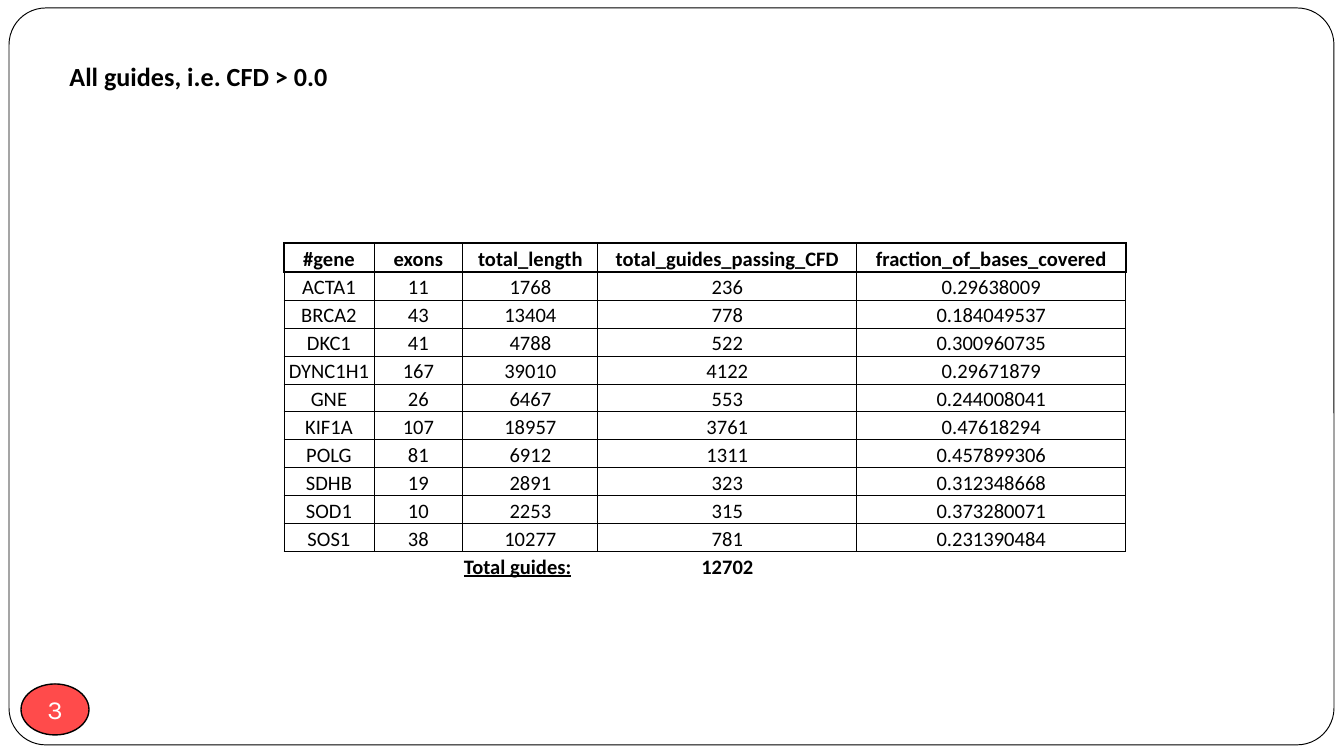
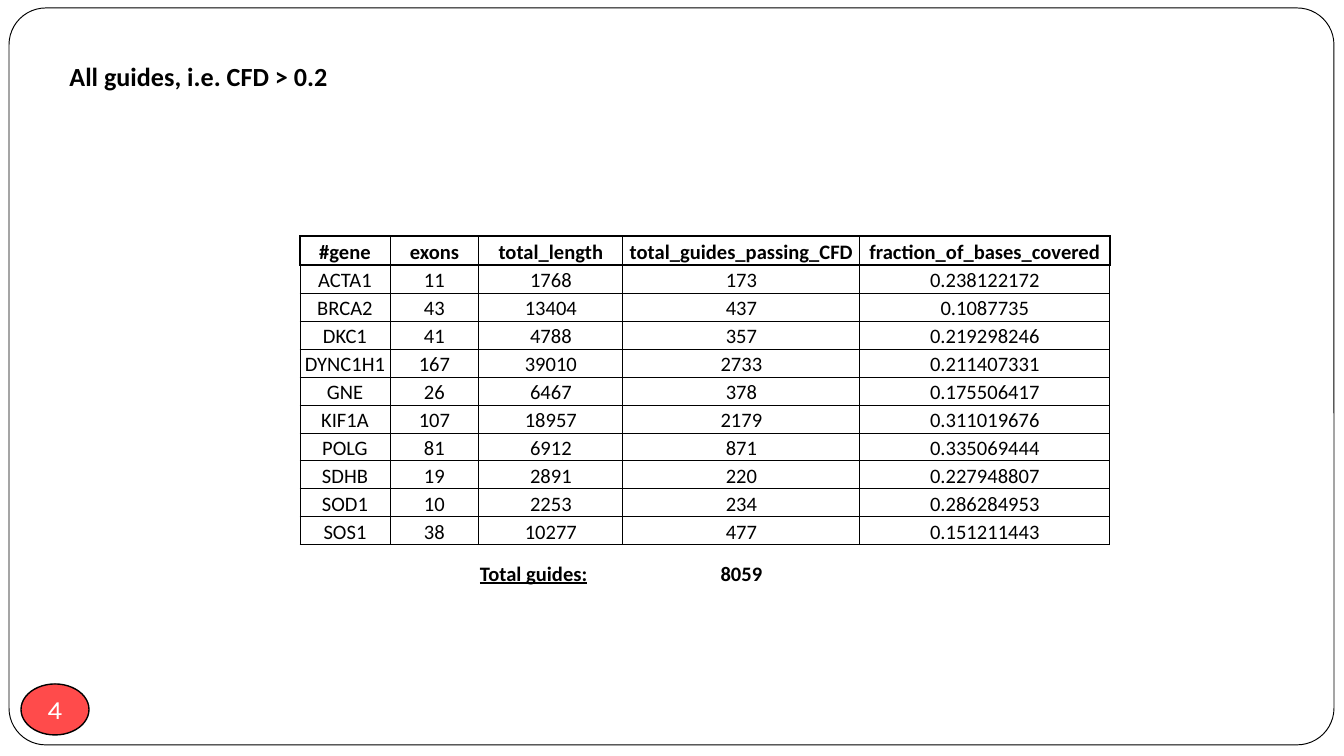
from dataclasses import dataclass
from lxml.etree import SubElement
from pptx import Presentation
from pptx.dml.color import RGBColor
from pptx.enum.shapes import MSO_SHAPE
from pptx.enum.text import MSO_ANCHOR, MSO_AUTO_SIZE, PP_ALIGN
from pptx.oxml.ns import qn
from pptx.util import Emu, Pt


@dataclass(frozen=True)
class Theme:
    black: str = "000000"
    white: str = "FFFFFF"
    red: str = "FF4B4B"
    font: str = "Calibri"
    badge_font: str = "Karla"
    title_size: int = 14
    table_size: int = 11
    thin: float = 0.5
    badge_line: float = 0.75
    thick: float = 1


THEME = Theme()
WIDTH, HEIGHT = 1344, 756
SCALE = 9144000 / WIDTH

HEADER = ["#gene", "exons", "total_length", "total_guides_passing_CFD",
          "fraction_of_bases_covered"]
GENES = [("ACTA1", 11, 1768), ("BRCA2", 43, 13404), ("DKC1", 41, 4788),
         ("DYNC1H1", 167, 39010), ("GNE", 26, 6467), ("KIF1A", 107, 18957),
         ("POLG", 81, 6912), ("SDHB", 19, 2891), ("SOD1", 10, 2253),
         ("SOS1", 38, 10277)]
HEADER_HEIGHT, ROW_HEIGHT = 29, 28


@dataclass(frozen=True)
class GuideSlide:
    number: int
    cutoff: str
    left: int
    top: int
    columns: tuple
    total_height: int
    guides: tuple
    fractions: tuple


GUIDE_SLIDES = [
    GuideSlide(3, "0.0", 284, 243, (90, 89, 135, 259, 269), 28,
               (236, 778, 522, 4122, 553, 3761, 1311, 323, 315, 781),
               ("0.29638009", "0.184049537", "0.300960735", "0.29671879",
                "0.244008041", "0.47618294", "0.457899306", "0.312348668",
                "0.373280071", "0.231390484")),
    GuideSlide(4, "0.2", 300, 236, (90, 89, 144, 237, 250), 42,
               (173, 437, 357, 2733, 378, 2179, 871, 220, 234, 477),
               ("0.238122172", "0.1087735", "0.219298246", "0.211407331",
                "0.175506417", "0.311019676", "0.335069444", "0.227948807",
                "0.286284953", "0.151211443")),
]


def px(n):
    return Emu(round(n * SCALE))


def style_text(p, size, color, font=THEME.font, bold=False, underline=False,
               align=PP_ALIGN.CENTER):
    p.alignment = align
    for r in p.runs:
        r.font.name = font
        r.font.size = Pt(size)
        r.font.bold = bold
        r.font.underline = underline
        r.font.color.rgb = RGBColor.from_string(color)


def add_outlined_shape(s, kind, box, fill, line_width):
    sp = s.shapes.add_shape(kind, *map(px, box))
    sp.shadow.inherit = False
    sp.fill.solid()
    sp.fill.fore_color.rgb = RGBColor.from_string(fill)
    sp.line.color.rgb = RGBColor.from_string(THEME.black)
    sp.line.width = Pt(line_width)
    return sp


def add_layout_frame(s):
    sp = add_outlined_shape(s, MSO_SHAPE.ROUNDED_RECTANGLE, (9, 8, 1325, 737),
                            THEME.white, THEME.thin)
    sp.adjustments[0] = 0.05
    s.slide_layout.shapes.element.insert(2, sp.element)


def set_title(s, text):
    sp = s.shapes.title
    sp.left, sp.top, sp.width, sp.height = map(px, (56, 54, 288, 46))
    tf = sp.text_frame
    tf.text = text
    tf.word_wrap = False
    tf.auto_size = MSO_AUTO_SIZE.SHAPE_TO_FIT_TEXT
    tf.vertical_anchor = MSO_ANCHOR.TOP
    style_text(tf.paragraphs[0], THEME.title_size, THEME.black, bold=True,
               align=PP_ALIGN.LEFT)


def add_number_badge(s, number):
    sp = add_outlined_shape(s, MSO_SHAPE.OVAL, (21, 684, 68, 51), THEME.red,
                            THEME.badge_line)
    tf = sp.text_frame
    tf.text = str(number)
    tf.word_wrap = False
    tf.vertical_anchor = MSO_ANCHOR.MIDDLE
    tf.margin_left = tf.margin_right = tf.margin_top = tf.margin_bottom = 0
    style_text(tf.paragraphs[0], THEME.title_size, THEME.white, THEME.badge_font)


def set_borders(cell, left, right, top, bottom):
    tc_pr = cell._tc.get_or_add_tcPr()
    for side, width in zip("LRTB", (left, right, top, bottom)):
        ln = SubElement(tc_pr, qn(f"a:ln{side}"), w=str(Pt(width)))
        if width:
            fill = SubElement(ln, qn("a:solidFill"))
            SubElement(fill, qn("a:srgbClr"), val=THEME.black)
        else:
            SubElement(ln, qn("a:noFill"))


def border_widths(row, col, last_row, last_col):
    thin, thick = THEME.thin, THEME.thick
    if row == 0:
        return (thick if col == 0 else thin,
                thick if col == last_col else thin, thick, thick)
    if row == last_row:
        return 0, 0, thin, 0
    return thin, thin, thick if row == 1 else thin, thin


def fill_cell(cell, value, bold, underline, align):
    cell.margin_left = cell.margin_right = cell.margin_top = px(1)
    cell.margin_bottom = 0
    cell.vertical_anchor = MSO_ANCHOR.BOTTOM
    cell.text = str(value)
    p = cell.text_frame.paragraphs[0]
    style_text(p, THEME.table_size, THEME.black, bold=bold,
               underline=underline, align=align)
    if not p.runs:
        p._p.get_or_add_endParaRPr().set("sz", str(THEME.table_size * 100))


def add_guide_table(s, guide):
    genes = [(*gene, count, fraction) for gene, count, fraction
             in zip(GENES, guide.guides, guide.fractions)]
    total = ["", "", "Total guides:", sum(guide.guides), ""]
    rows = [HEADER, *genes, total]
    heights = [HEADER_HEIGHT, *[ROW_HEIGHT] * len(genes), guide.total_height]
    box = guide.left, guide.top, sum(guide.columns), sum(heights)
    table = s.shapes.add_table(len(rows), len(HEADER), *map(px, box)).table
    table.first_row = table.horz_banding = False
    for column, width in zip(table.columns, guide.columns):
        column.width = px(width)
    last_row, last_col = len(rows) - 1, len(HEADER) - 1
    for i, values in enumerate(rows):
        table.rows[i].height = px(heights[i])
        for j, value in enumerate(values):
            cell = table.cell(i, j)
            is_label = i == last_row and j == 2
            fill_cell(cell, value, i in (0, last_row), is_label,
                      PP_ALIGN.LEFT if is_label else PP_ALIGN.CENTER)
            set_borders(cell, *border_widths(i, j, last_row, last_col))
            cell.fill.background()


def main():
    prs = Presentation()
    prs.slide_width, prs.slide_height = px(WIDTH), px(HEIGHT)
    layout = prs.slide_layouts[5]
    for i, guide in enumerate(GUIDE_SLIDES):
        s = prs.slides.add_slide(layout)
        if i == 0:
            add_layout_frame(s)
        add_number_badge(s, guide.number)
        set_title(s, f"All guides, i.e. CFD > {guide.cutoff}")
        add_guide_table(s, guide)
    prs.save("out.pptx")


if __name__ == "__main__":
    main()
